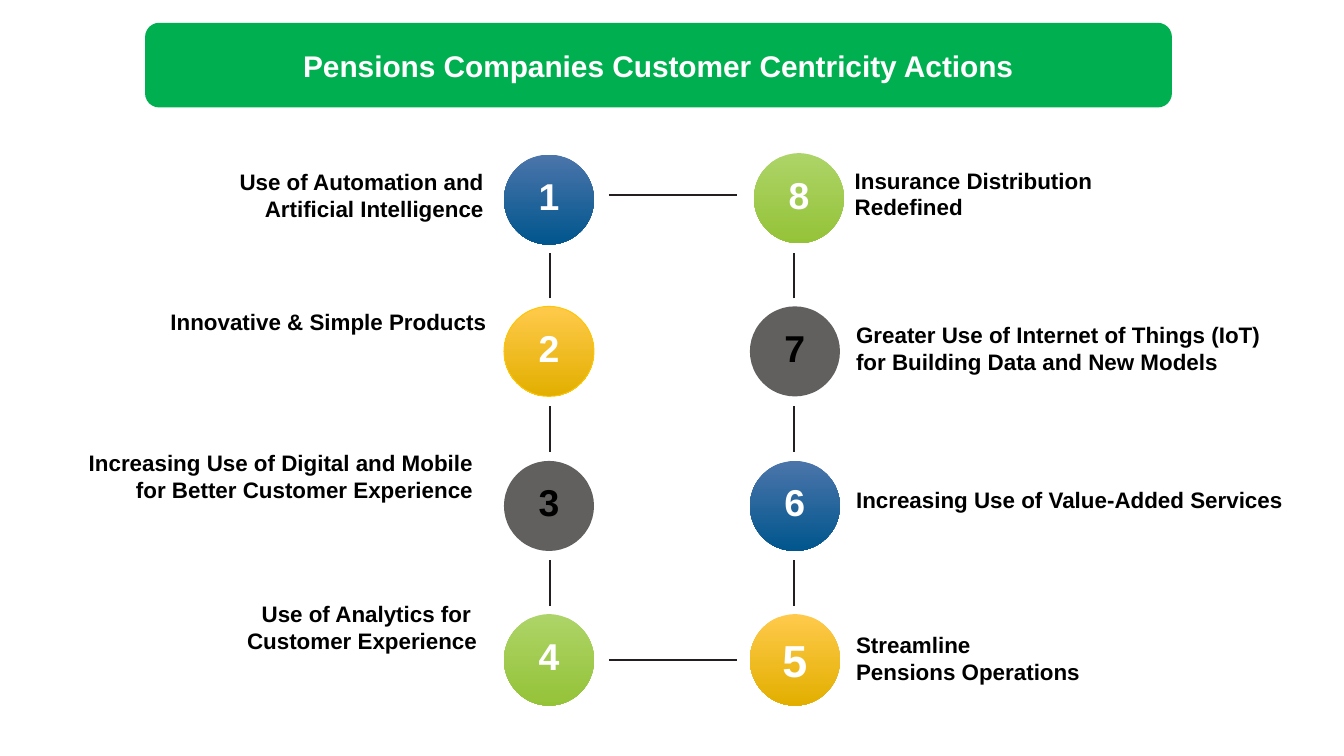
from lxml import etree
from pptx import Presentation
from pptx import util as u
from pptx.dml.color import RGBColor
from pptx.enum import shapes, text
from pptx.oxml.ns import qn

WHITE = RGBColor(0xFF, 0xFF, 0xFF)
BLACK = RGBColor(0x00, 0x00, 0x00)
GREEN = RGBColor(0x00, 0xB0, 0x50)
INK = RGBColor(0x23, 0x1F, 0x20)
GOLD_EDGE = RGBColor(0xFF, 0xC6, 0x00)
GREY = (RGBColor(0x61, 0x60, 0x5E),)
BLUE = (RGBColor(0x4B, 0x75, 0xAA), RGBColor(0x00, 0x56, 0x8D))
GOLD = (RGBColor(0xFF, 0xCA, 0x4B), RGBColor(0xE2, 0xAF, 0x00))
LIME = (RGBColor(0xAD, 0xD4, 0x68), RGBColor(0x95, 0xC3, 0x38))
LEFT, CENTER, RIGHT = text.PP_ALIGN.LEFT, text.PP_ALIGN.CENTER, text.PP_ALIGN.RIGHT
TOP, MIDDLE = text.MSO_ANCHOR.TOP, text.MSO_ANCHOR.MIDDLE

deck = Presentation()
deck.slide_width = u.Inches(10)
deck.slide_height = u.Inches(10 * 9 / 16)
page = deck.slides.add_slide(deck.slide_layouts[6])


def write(shape, lines, size, color, align, anchor, inset):
    """Fill a shape with bold Arial lines; inset is (horizontal, vertical) in inches."""
    frame = shape.text_frame
    across, down = map(u.Inches, inset)
    settings = {"word_wrap": True, "vertical_anchor": anchor,
                "margin_left": across, "margin_right": across,
                "margin_top": down, "margin_bottom": down}
    for name, value in settings.items():
        setattr(frame, name, value)
    for number, line in enumerate(lines):
        para = frame.add_paragraph() if number else frame.paragraphs[0]
        para.alignment = align
        span = para.add_run()
        span.text = line
        for name, value in {"name": "Arial", "size": u.Pt(size), "bold": True}.items():
            setattr(span.font, name, value)
        span.font.color.rgb = color


def add_plain_shape(kind, *place):
    shape = page.shapes.add_shape(kind, *map(u.Inches, place))
    shape.shadow.inherit = False
    shape.line.fill.background()
    return shape


# Numbered circles: down the left column, up the right one
steps = [
    ("1", 3.75, 1.15, 0.67, BLUE), ("2", 3.75, 2.28, 0.67, GOLD),
    ("3", 3.75, 3.43, 0.67, GREY), ("4", 3.75, 4.57, 0.68, LIME),
    ("5", 5.58, 4.57, 0.68, GOLD), ("6", 5.58, 3.43, 0.67, BLUE),
    ("7", 5.58, 2.28, 0.67, GREY), ("8", 5.61, 1.14, 0.67, LIME),
]
for number, x, y, height, colors in steps:
    circle = add_plain_shape(shapes.MSO_SHAPE.OVAL, x, y, 0.67, height)
    if colors is GREY:
        circle.fill.solid()
        circle.fill.fore_color.rgb = GREY[0]
    else:
        circle.fill.gradient()
        circle.fill.gradient_angle = 270
        for stop, color in zip(circle.fill.gradient_stops, colors):
            stop.color.rgb = color
    if number == "2":
        circle.line.color.rgb = GOLD_EDGE
        circle.line.width = u.Pt(0.5)
    write(circle, [number], 24 if number == "5" else 20,
          BLACK if colors is GREY else WHITE, CENTER, TOP, (0.08, 0.04))

# Links between the steps
links = [(4.53, y, 5.48, y) for y in (1.45, 4.91)]
links += [(x, y, x, y - 0.34) for y in (4.51, 3.36, 2.22) for x in (5.91, 4.09)]
for link in links:
    connector = page.shapes.add_connector(
        shapes.MSO_CONNECTOR.STRAIGHT, *map(u.Inches, link))
    connector.line.color.rgb = INK
    connector.line.width = u.Pt(1.25)
    etree.SubElement(connector._element.spPr, qn("a:effectLst"))

# Title banner
banner = add_plain_shape(shapes.MSO_SHAPE.ROUNDED_RECTANGLE, 1.08, 0.17, 7.64, 0.63)
banner.fill.solid()
banner.fill.fore_color.rgb = GREEN
write(banner, ["Pensions Companies Customer Centricity Actions"], 16, WHITE,
      CENTER, MIDDLE, (0.1, 0.05))

# Step labels
TIGHT, PADDED = (0, 0), (0.1, 0.05)
labels = [
    (1.74, 1.25, 1.86, 0.4, RIGHT, TIGHT,
     ["Use of Automation and", "Artificial Intelligence"]),
    (0.34, 2.29, 3.28, 0.2, RIGHT, TIGHT, ["Innovative & Simple Products"]),
    (0.41, 3.29, 3.21, 0.5, RIGHT, PADDED,
     ["Increasing Use of Digital and Mobile for Better Customer Experience"]),
    (0.44, 4.42, 3.21, 0.5, RIGHT, PADDED,
     ["Use of Analytics for ", "Customer Experience"]),
    (6.36, 1.24, 2, 0.4, LEFT, TIGHT, ["Insurance Distribution", "Redefined"]),
    (6.37, 2.39, 3.06, 0.4, LEFT, TIGHT,
     ["Greater Use of Internet of Things (IoT)", "for Building Data and New Models"]),
    (6.37, 3.62, 3.2, 0.2, LEFT, TIGHT, ["Increasing Use of Value-Added Services"]),
    (6.37, 4.7, 1.67, 0.4, LEFT, TIGHT, ["Streamline", "Pensions Operations"]),
]
for x, y, width, height, align, inset, lines in labels:
    box = page.shapes.add_textbox(*map(u.Inches, (x, y, width, height)))
    write(box, lines, 12, BLACK, align, TOP, inset)

deck.save("out.pptx")
